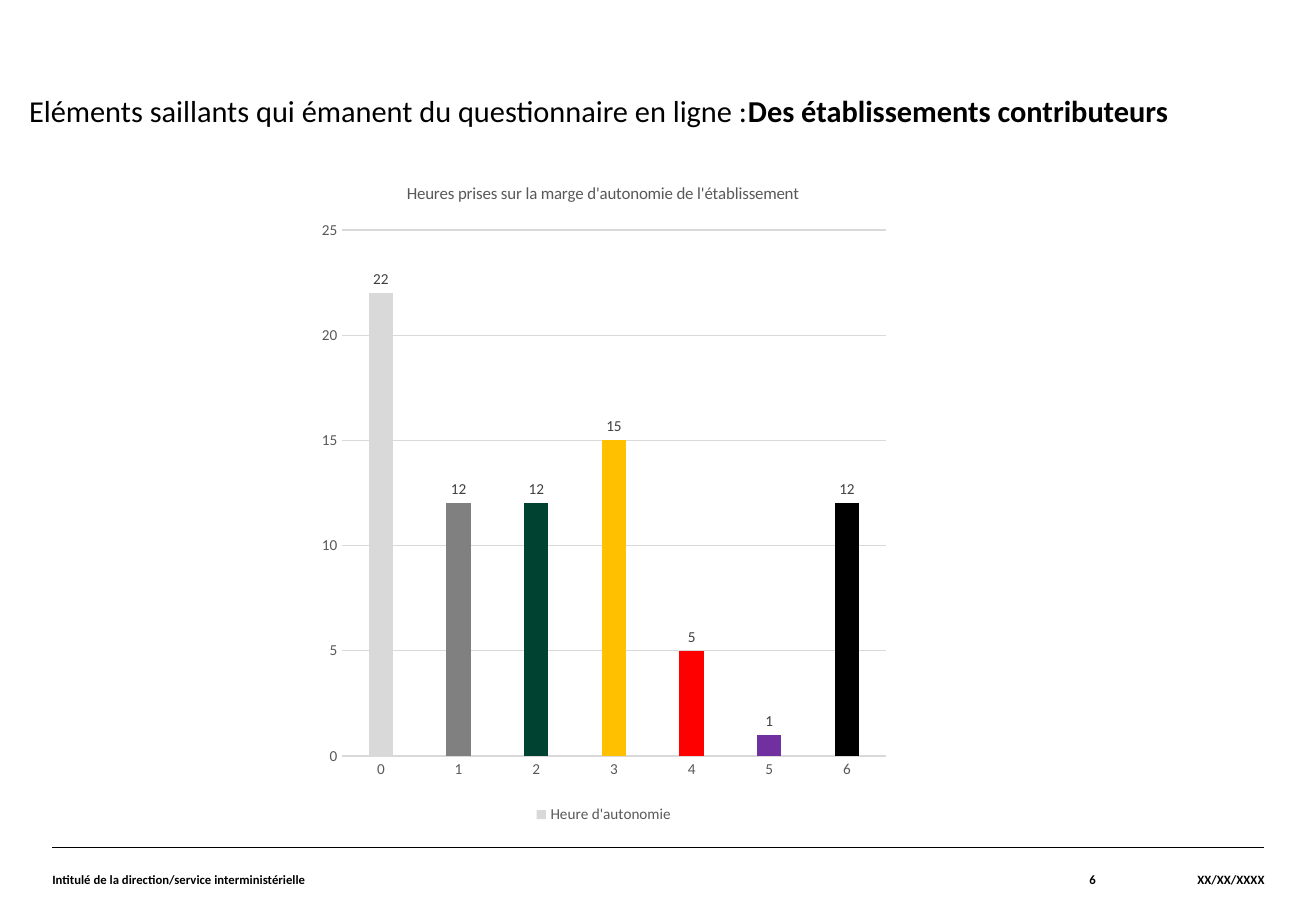
from lxml import etree
from pptx import Presentation
from pptx import util as u
from pptx.chart import data as chart_data
from pptx.dml import color
from pptx.enum import chart as ch, shapes, text
from pptx.oxml import ns

RGB = color.RGBColor
BLACK = RGB(0x00, 0x00, 0x00)
DARK_GREY = RGB(0x40, 0x40, 0x40)
TEXT_GREY = RGB(0x59, 0x59, 0x59)
LIGHT_GREY = RGB(0xD9, 0xD9, 0xD9)
BAR_COLORS = [
    LIGHT_GREY, RGB(0x80, 0x80, 0x80), RGB(0x00, 0x42, 0x31), RGB(0xFF, 0xC0, 0x00),
    RGB(0xFF, 0x00, 0x00), RGB(0x70, 0x30, 0xA0), BLACK,
]
HOURS = [22, 12, 12, 15, 5, 1, 12]


def set_all(target, **values):
    for name, value in values.items():
        setattr(target, name, value)


def set_font(font, size, rgb, bold=False):
    set_all(font, name="Calibri", size=u.Pt(size), bold=bold)
    font.color.rgb = rgb


def set_line(line, rgb, width):
    line.color.rgb = rgb
    line.width = u.Pt(width)


def set_layout(parent, after, **fractions):
    """Give a chart part a fixed place, as fractions of the chart."""
    for old in parent.findall(ns.qn("c:layout")):
        parent.remove(old)
    layout = etree.Element(ns.qn("c:layout"))
    manual = etree.SubElement(layout, ns.qn("c:manualLayout"))
    if "w" in fractions:
        etree.SubElement(manual, ns.qn("c:layoutTarget"), val="inner")
    for name in ("x", "y"):
        etree.SubElement(manual, ns.qn(f"c:{name}Mode"), val="edge")
    for name, value in fractions.items():
        etree.SubElement(manual, ns.qn(f"c:{name}"), val=str(value))
    if after is None:
        parent.insert(0, layout)
    else:
        after.addnext(layout)


def add_title(slide, left, top, width, height):
    title = slide.shapes.title
    set_all(title, left=u.Pt(left), top=u.Pt(top), width=u.Pt(width), height=u.Pt(height))
    frame = title.text_frame
    set_all(frame, word_wrap=True, auto_size=text.MSO_AUTO_SIZE.NONE,
            vertical_anchor=text.MSO_ANCHOR.TOP)
    paragraph = frame.paragraphs[0]
    paragraph.alignment = text.PP_ALIGN.LEFT
    for words, bold in (
        ("Eléments saillants qui émanent du questionnaire en ligne :", False),
        ("Des établissements contributeurs", True),
    ):
        run = paragraph.add_run()
        run.text = words
        set_font(run.font, 18, BLACK, bold)


def add_hours_chart(slide, left, top, width, height):
    data = chart_data.CategoryChartData()
    data.categories = [str(number) for number in range(len(HOURS))]
    data.add_series("Heure d'autonomie", HOURS)
    chart = slide.shapes.add_chart(
        ch.XL_CHART_TYPE.COLUMN_CLUSTERED,
        u.Pt(left), u.Pt(top), u.Pt(width), u.Pt(height), data).chart
    set_font(chart.font, 10, BLACK)

    # Chart title
    chart.has_title = True
    frame = chart.chart_title.text_frame
    frame.text = "Heures prises sur la marge d'autonomie de l'établissement"
    set_font(frame.paragraphs[0].runs[0].font, 10, TEXT_GREY)
    chart.chart_title.include_in_layout = False
    title_xml = chart.chart_title._element
    set_layout(title_xml, title_xml.find(ns.qn("c:tx")), x=0.16, y=0.03)

    # Axes and gridlines
    for axis in (chart.category_axis, chart.value_axis):
        set_all(axis, major_tick_mark=ch.XL_TICK_MARK.NONE,
                minor_tick_mark=ch.XL_TICK_MARK.NONE)
        set_font(axis.tick_labels.font, 9, TEXT_GREY)
    set_line(chart.category_axis.format.line, LIGHT_GREY, 0.75)
    set_all(chart.value_axis, minimum_scale=0, maximum_scale=25, major_unit=5,
            has_major_gridlines=True)
    chart.value_axis.format.line.fill.background()
    set_line(chart.value_axis.major_gridlines.format.line, LIGHT_GREY, 0.75)

    # Legend
    chart.has_legend = True
    set_all(chart.legend, position=ch.XL_LEGEND_POSITION.BOTTOM, include_in_layout=False)
    set_font(chart.legend.font, 9, TEXT_GREY)

    # Columns and their labels
    plot = chart.plots[0]
    set_all(plot, gap_width=219, overlap=-27, vary_by_categories=False)
    series = plot.series[0]
    series.format.fill.solid()
    series.format.fill.fore_color.rgb = LIGHT_GREY
    for index, rgb in enumerate(BAR_COLORS[1:], start=1):
        fill = series.points[index].format.fill
        fill.solid()
        fill.fore_color.rgb = rgb
    labels = series.data_labels
    set_all(labels, show_value=True, position=ch.XL_LABEL_POSITION.OUTSIDE_END)
    set_font(labels.font, 9, DARK_GREY)
    plot_area = chart._chartSpace.find(".//" + ns.qn("c:plotArea"))
    set_layout(plot_area, None, x=0.055, y=0.106, w=0.925, h=0.786)


def add_footer(slide, left, top, width, height):
    # Rule above the footer
    rule = slide.shapes.add_connector(
        shapes.MSO_CONNECTOR.STRAIGHT,
        u.Pt(left), u.Pt(top), u.Pt(left + width), u.Pt(top))
    set_line(rule.line, BLACK, 0.8)
    etree.SubElement(rule._element.spPr, ns.qn("a:effectLst"))

    # Department, page number and date, side by side
    date_width, page_width = 100, 115
    cells = (
        ("Intitulé de la direction/service interministérielle",
         width - date_width - page_width, text.PP_ALIGN.LEFT),
        ("6", page_width, text.PP_ALIGN.RIGHT),
        ("XX/XX/XXXX", date_width, text.PP_ALIGN.RIGHT),
    )
    for words, cell_width, alignment in cells:
        box = slide.shapes.add_textbox(u.Pt(left), u.Pt(top), u.Pt(cell_width), u.Pt(height))
        frame = box.text_frame
        set_all(frame, word_wrap=True, vertical_anchor=text.MSO_ANCHOR.MIDDLE,
                margin_left=0, margin_right=0, margin_top=0, margin_bottom=0)
        paragraph = frame.paragraphs[0]
        paragraph.text = words
        paragraph.alignment = alignment
        set_font(paragraph.runs[0].font, 7.5, BLACK, True)
        left += cell_width


def main():
    presentation = Presentation()
    set_all(presentation, slide_width=u.Pt(780), slide_height=u.Pt(540))
    slide = presentation.slides.add_slide(presentation.slide_layouts[5])
    add_footer(slide, 31, 502.5, 718.5, 37.5)
    add_title(slide, 10, 51, 770, 73)
    add_hours_chart(slide, 183.6, 94.3, 348.5, 396.7)
    presentation.save("out.pptx")


if __name__ == "__main__":
    main()
